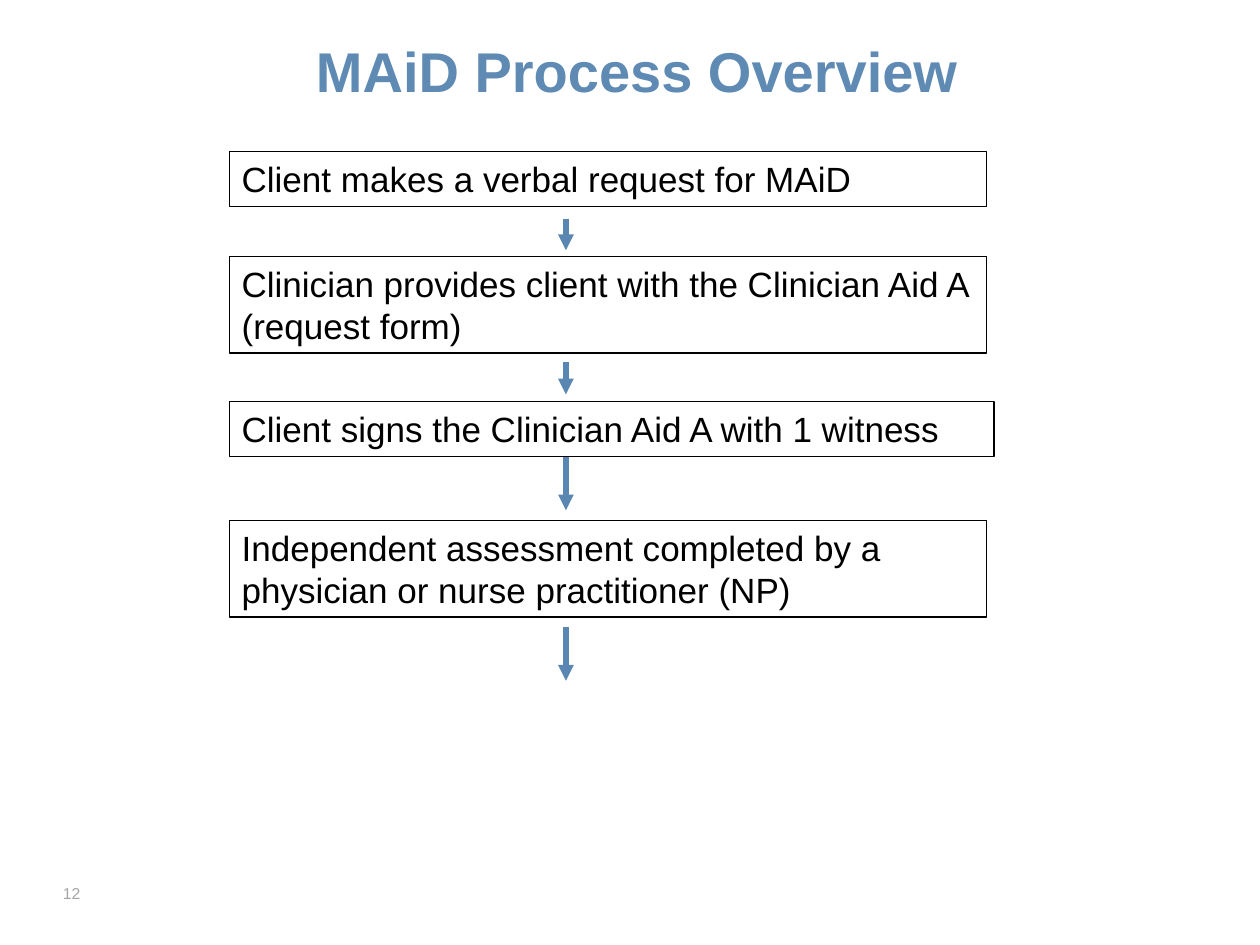
from dataclasses import dataclass

from lxml import etree
from pptx import Presentation
from pptx import util as u
from pptx.dml.color import RGBColor
from pptx.enum import shapes, text
from pptx.oxml.ns import qn

BLACK = "000000"
WHITE = "FFFFFF"
ARROW_BLUE = "5A87B2"
TITLE_BLUE = "5E8AB4"
NUMBER_GREY = "A6A6A6"

STEP_LEFT = 131
STEP_WIDTH = 432.7
ARROW_X = 323.4


@dataclass
class Step:
    wording: str
    top: float
    height: float
    width: float = STEP_WIDTH


@dataclass
class Arrow:
    top: float
    bottom: float


@dataclass
class Label:
    wording: str
    left: float
    top: float
    width: float
    height: float
    size: float
    color: str
    bold: bool
    alignment: text.PP_ALIGN
    anchor: text.MSO_ANCHOR


STEPS = [
    Step("Client makes a verbal request for MAiD", 86.4, 31.5),
    Step("Clinician provides client with the Clinician Aid A (request form)", 146.4, 55.4),
    Step("Client signs the Clinician Aid A with 1 witness", 229.5, 31.5, 437),
    Step("Independent assessment completed by a physician or nurse practitioner (NP)", 297.3, 55.4),
]
ARROWS = [
    Arrow(124.9, 143),
    Arrow(207.1, 225.4),
    Arrow(261, 291.6),
    Arrow(358.5, 389),
]
LABELS = [
    Label("MAiD Process Overview", 36, 20.9, 655.9, 59.8, 32, TITLE_BLUE, True,
          text.PP_ALIGN.CENTER, text.MSO_ANCHOR.TOP),
    Label("12", 36, 470.2, 144, 45.4, 9, NUMBER_GREY, False,
          text.PP_ALIGN.LEFT, text.MSO_ANCHOR.BOTTOM),
]


def color(value: str) -> RGBColor:
    return RGBColor.from_string(value)


def write(frame, wording: str, size: float, ink: str, bold: bool, alignment, anchor) -> None:
    frame.word_wrap = True
    frame.vertical_anchor = anchor
    paragraph = frame.paragraphs[0]
    paragraph.text = wording
    paragraph.alignment = alignment
    paragraph.font.name = "Arial"
    paragraph.font.size = u.Pt(size)
    paragraph.font.bold = bold
    paragraph.font.color.rgb = color(ink)


def draw_label(slide, label: Label) -> None:
    shape = slide.shapes.add_textbox(
        u.Pt(label.left), u.Pt(label.top), u.Pt(label.width), u.Pt(label.height))
    frame = shape.text_frame
    frame.margin_left = frame.margin_right = frame.margin_top = frame.margin_bottom = u.Pt(0)
    write(frame, label.wording, label.size, label.color, label.bold, label.alignment, label.anchor)


def draw_step(slide, step: Step) -> None:
    shape = slide.shapes.add_shape(
        shapes.MSO_SHAPE.RECTANGLE,
        u.Pt(STEP_LEFT), u.Pt(step.top), u.Pt(step.width), u.Pt(step.height))
    shape.shadow.inherit = False
    shape.fill.solid()
    shape.fill.fore_color.rgb = color(WHITE)
    shape.line.color.rgb = color(BLACK)
    shape.line.width = u.Pt(0.75)
    write(shape.text_frame, step.wording, 20, BLACK, False,
          text.PP_ALIGN.LEFT, text.MSO_ANCHOR.TOP)
    shape.text_frame.auto_size = text.MSO_AUTO_SIZE.SHAPE_TO_FIT_TEXT


def draw_arrow(slide, arrow: Arrow) -> None:
    connector = slide.shapes.add_connector(
        shapes.MSO_CONNECTOR.STRAIGHT,
        u.Pt(ARROW_X), u.Pt(arrow.top), u.Pt(ARROW_X), u.Pt(arrow.bottom))
    connector.line.color.rgb = color(ARROW_BLUE)
    connector.line.width = u.Pt(3)
    properties = connector._element.spPr
    etree.SubElement(properties.find(qn("a:ln")), qn("a:tailEnd"), type="triangle")
    etree.SubElement(properties, qn("a:effectLst"))


def main() -> None:
    presentation = Presentation()
    presentation.slide_width = u.Pt(720)
    presentation.slide_height = u.Pt(540)
    slide = presentation.slides.add_slide(presentation.slide_layouts[6])
    for label in LABELS:
        draw_label(slide, label)
    for step in STEPS:
        draw_step(slide, step)
    for arrow in ARROWS:
        draw_arrow(slide, arrow)
    presentation.save("out.pptx")


if __name__ == "__main__":
    main()
